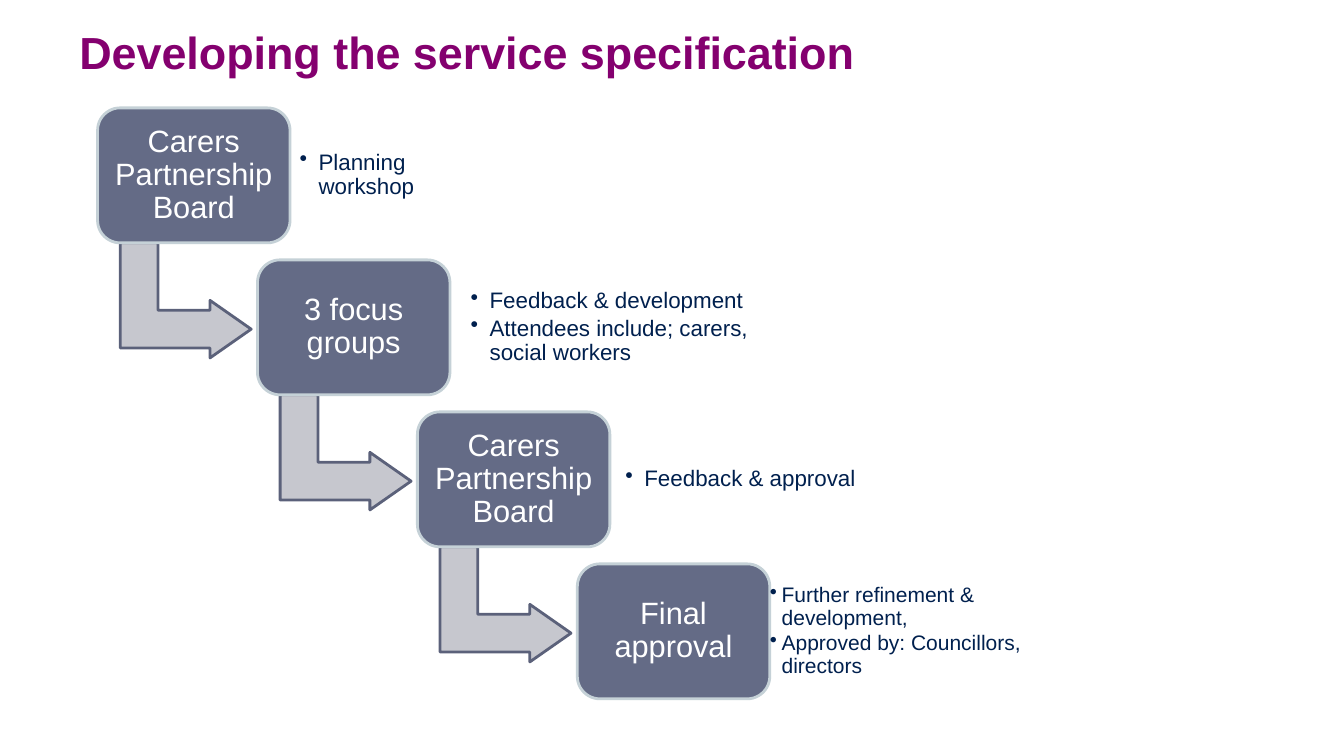
from dataclasses import dataclass

from lxml import etree
from pptx import Presentation, util as u
from pptx.dml.color import RGBColor
from pptx.enum import shapes, text
from pptx.oxml.ns import qn


@dataclass(frozen=True)
class Theme:
    font: str = "Arial"
    heading: str = "84006F"
    note: str = "00204E"
    stage_text: str = "FFFFFF"
    stage_fill: str = "646B86"
    stage_line: str = "C5D1D7"
    arrow_fill: str = "C6C7CE"
    arrow_line: str = "5B617A"
    heading_size: float = 32.1
    stage_size: float = 22
    line_width: float = 2


def write(frame, lines, *, size, color, font, bold=False, align=None,
          spacing=1.0, after=0, hang=None, inset=(0.23, 0.23)):
    """Fill a text frame, one paragraph per line; hang (cm) adds bullets."""
    frame.word_wrap = True
    frame.vertical_anchor = text.MSO_ANCHOR.MIDDLE
    frame.margin_left = frame.margin_right = u.Cm(inset[0])
    frame.margin_top = frame.margin_bottom = u.Cm(inset[1])
    for i, line in enumerate(lines):
        para = frame.paragraphs[0] if i == 0 else frame.add_paragraph()
        if hang:
            props = para._p.get_or_add_pPr()
            props.set("marL", str(u.Cm(hang)))
            props.set("indent", str(-u.Cm(hang)))
            etree.SubElement(props, qn("a:buChar")).set("char", "•")
        para.alignment = align
        para.line_spacing = spacing
        para.space_after = u.Pt(after)
        run = para.add_run()
        run.text = line
        run.font.name, run.font.size, run.font.bold = font, u.Pt(size), bold
        run.font.color.rgb = RGBColor.from_string(color)


class StairSlide:
    def __init__(self, deck, theme):
        self.theme = theme
        self.slide = deck.slides.add_slide(deck.slide_layouts[6])

    def _shape(self, kind, box, adjustments, fill, line):
        shape = self.slide.shapes.add_shape(kind, *map(u.Cm, box))
        shape.shadow.inherit = False
        for i, value in enumerate(adjustments):
            shape.adjustments[i] = value
        shape.fill.solid()
        shape.fill.fore_color.rgb = RGBColor.from_string(fill)
        shape.line.color.rgb = RGBColor.from_string(line)
        shape.line.width = u.Pt(self.theme.line_width)
        return shape

    def _text(self, box, lines, **style):
        frame = self.slide.shapes.add_textbox(*map(u.Cm, box)).text_frame
        write(frame, lines, font=self.theme.font, **style)

    def heading(self, box, wording):
        self._text(box, [wording], size=self.theme.heading_size,
                   color=self.theme.heading, bold=True, inset=(0.3, 0.15))

    def arrow(self, box):
        arrow = self._shape(shapes.MSO_SHAPE.BENT_UP_ARROW, box, (0.328, 0.25, 0.358),
                            self.theme.arrow_fill, self.theme.arrow_line)
        arrow.rotation = 90

    def stage(self, box, wording):
        stage = self._shape(shapes.MSO_SHAPE.ROUNDED_RECTANGLE, box, (0.167,),
                            self.theme.stage_fill, self.theme.stage_line)
        write(stage.text_frame, [wording], size=self.theme.stage_size,
              color=self.theme.stage_text, font=self.theme.font,
              align=text.PP_ALIGN.CENTER, spacing=0.9, inset=(0.22, 0.22))

    def notes(self, box, points, size, hang, inset):
        self._text(box, points, size=size, color=self.theme.note, spacing=0.9,
                   after=0.15 * size, hang=hang, inset=(inset, inset))


# Stage, its points, left and width of the points (cm), type size, hang, inset
STAGES = [
    ("Carers Partnership Board", ["Planning workshop"], 7.32, 3.53, 16, 0.48, 0.23),
    ("3 focus groups", ["Feedback & development", "Attendees include; carers, social workers"],
     11.63, 7.49, 16, 0.48, 0.23),
    ("Carers Partnership Board", ["Feedback & approval"], 15.53, 7.06, 16, 0.48, 0.23),
    ("Final approval", ["Further refinement & development,", "Approved by: Councillors, directors"],
     19.2, 7.47, 15, 0.3, 0.2),
]
STAGE_LEFT, STAGE_TOP = 2.46, 2.72
STAGE_WIDTH, STAGE_HEIGHT = 4.85, 3.4
STEP_X, STEP_Y = 4.03, 3.83


def main():
    deck = Presentation()
    deck.slide_width, deck.slide_height = u.Cm(33.87), u.Cm(19.05)
    stairs = StairSlide(deck, Theme())
    stairs.heading((1.7, -0.28, 31.07, 3.18), "Developing the service specification")

    # Staircase of stages, each leading to the next
    for i, (stage, points, notes_left, notes_width, size, hang, inset) in enumerate(STAGES):
        left, top = STAGE_LEFT + i * STEP_X, STAGE_TOP + i * STEP_Y
        if i < len(STAGES) - 1:
            stairs.arrow((left + 0.77, top + 3.2, 2.9, 3.3))
        stairs.stage((left, top, STAGE_WIDTH, STAGE_HEIGHT), stage)
        stairs.notes((notes_left, top + 0.32, notes_width, 2.75), points, size, hang, inset)

    deck.save("out.pptx")


if __name__ == "__main__":
    main()
